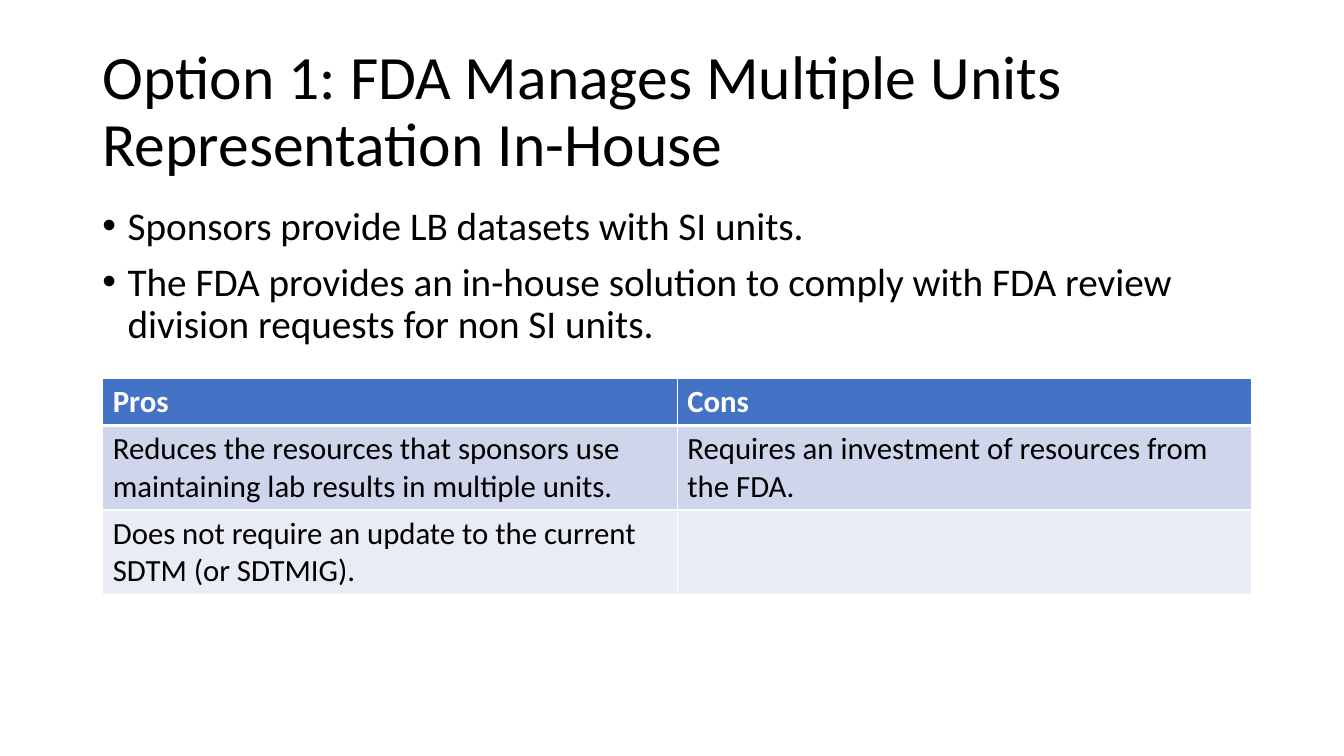
"""Build the slide on managing multiple lab units in-house, with its pros and cons."""
from dataclasses import dataclass

from lxml.etree import SubElement
from pptx import Presentation
from pptx.dml.color import RGBColor as Color
from pptx.enum.text import MSO_ANCHOR as Anchor, MSO_AUTO_SIZE as AutoSize, PP_ALIGN as Align
from pptx.oxml.ns import qn
from pptx.util import Emu, Inches, Pt


@dataclass(frozen=True)
class Theme:
    font: str = "Calibri"
    ink: str = "000000"
    paper: str = "FFFFFF"
    header: str = "4472C4"
    bands: tuple[str, str] = ("CFD5EA", "E9EBF5")
    title_size: float = 44
    body_size: float = 28
    table_size: float = 22
    line_spacing: float = 0.9
    bullet_gap: float = 10
    rule: float = 1
    header_rule: float = 3


@dataclass(frozen=True)
class Area:
    left: float
    top: float
    width: float
    height: float


@dataclass(frozen=True)
class TableRow:
    height: float
    texts: tuple[str, str]
    fill: str
    color: str
    bold: bool = False
    top_rule: float = 1
    bottom_rule: float = 1


THEME = Theme()
SLIDE_WIDTH, SLIDE_HEIGHT = Inches(13.33), Inches(7.5)
TITLE_AREA = Area(6.88, 5.32, 86.25, 19.33)
BODY_AREA = Area(6.88, 26.62, 86.25, 63.45)
TABLE_AREA = Area(7.65, 50, 85.5, 28.67)
HEADER_HEIGHT, ROW_HEIGHT = 6.27, 11.2

TITLE = "Option 1: FDA Manages Multiple Units Representation In-House"
BULLETS = (
    "Sponsors provide LB datasets with SI units.",
    "The FDA provides an in-house solution to comply with FDA review division requests for non SI units.",
)
ROWS = (
    TableRow(HEADER_HEIGHT, ("Pros", "Cons"), THEME.header, THEME.paper, bold=True,
             bottom_rule=THEME.header_rule),
    TableRow(ROW_HEIGHT, ("Reduces the resources that sponsors use maintaining lab results in multiple units.",
                          "Requires an investment of resources from the FDA."),
             THEME.bands[0], THEME.ink, top_rule=THEME.header_rule),
    TableRow(ROW_HEIGHT, ("Does not require an update to the current SDTM (or SDTMIG).", ""),
             THEME.bands[1], THEME.ink),
)


def across(share: float) -> Emu:
    """Turn a percentage of the slide width into a length."""
    return Emu(round(SLIDE_WIDTH * share / 100))


def down(share: float) -> Emu:
    """Turn a percentage of the slide height into a length."""
    return Emu(round(SLIDE_HEIGHT * share / 100))


def bounds(area: Area) -> tuple[Emu, Emu, Emu, Emu]:
    """Return left, top, width and height of an area as lengths."""
    return across(area.left), down(area.top), across(area.width), down(area.height)


def write(para, text: str, *, size: float, color: str = THEME.ink, bold: bool = False,
          line_spacing: float | None = None, before: float | None = None, bullet: str = "") -> None:
    """Put one formatted span, optionally bulleted, into a paragraph."""
    para.alignment = Align.LEFT
    if line_spacing is not None:
        para.line_spacing = line_spacing
    if before is not None:
        para.space_before = Pt(before)
    if bullet:
        properties = para._p.get_or_add_pPr()
        properties.set("marL", str(Inches(0.25)))
        properties.set("indent", str(-Inches(0.25)))
        SubElement(properties, qn("a:buFont"), typeface="Arial")
        SubElement(properties, qn("a:buChar"), char=bullet)
    if text:
        span = para.add_run()
        span.text = text
        span.font.name, span.font.size, span.font.bold = THEME.font, Pt(size), bold
        span.font.color.rgb = Color.from_string(color)


def add_title(page) -> None:
    """Place and fill the title placeholder."""
    title = page.shapes.title
    title.left, title.top, title.width, title.height = bounds(TITLE_AREA)
    frame = title.text_frame
    frame.auto_size, frame.word_wrap = AutoSize.NONE, True
    frame.vertical_anchor = Anchor.MIDDLE
    write(frame.paragraphs[0], TITLE, size=THEME.title_size, line_spacing=THEME.line_spacing, before=0)


def add_bullets(page) -> None:
    """Add the bulleted body text."""
    frame = page.shapes.add_textbox(*bounds(BODY_AREA)).text_frame
    frame.word_wrap = True
    for index, text in enumerate(BULLETS):
        para = frame.add_paragraph() if index else frame.paragraphs[0]
        write(para, text, size=THEME.body_size, line_spacing=THEME.line_spacing,
              before=THEME.bullet_gap, bullet="•")


def set_borders(cell, row: TableRow) -> None:
    """Draw the four rules around a table cell."""
    widths = {"L": THEME.rule, "R": THEME.rule, "T": row.top_rule, "B": row.bottom_rule}
    properties = cell._tc.get_or_add_tcPr()
    for side, width in widths.items():
        line = SubElement(properties, qn(f"a:ln{side}"), w=str(Pt(width)))
        SubElement(SubElement(line, qn("a:solidFill")), qn("a:srgbClr"), val=THEME.paper)


def add_comparison(page) -> None:
    """Add the table of pros and cons."""
    columns = len(ROWS[0].texts)
    table = page.shapes.add_table(len(ROWS), columns, *bounds(TABLE_AREA)).table
    for row_index, row in enumerate(ROWS):
        table.rows[row_index].height = down(row.height)
        for column, text in enumerate(row.texts):
            cell = table.cell(row_index, column)
            set_borders(cell, row)
            cell.fill.solid()
            cell.fill.fore_color.rgb = Color.from_string(row.fill)
            write(cell.text_frame.paragraphs[0], text, size=THEME.table_size,
                  color=row.color, bold=row.bold)


def main() -> None:
    """Assemble and save the deck."""
    deck = Presentation()
    deck.slide_width, deck.slide_height = SLIDE_WIDTH, SLIDE_HEIGHT
    page = deck.slides.add_slide(deck.slide_layouts.get_by_name("Title Only"))
    add_title(page)
    add_bullets(page)
    add_comparison(page)
    deck.save("out.pptx")


if __name__ == "__main__":
    main()
